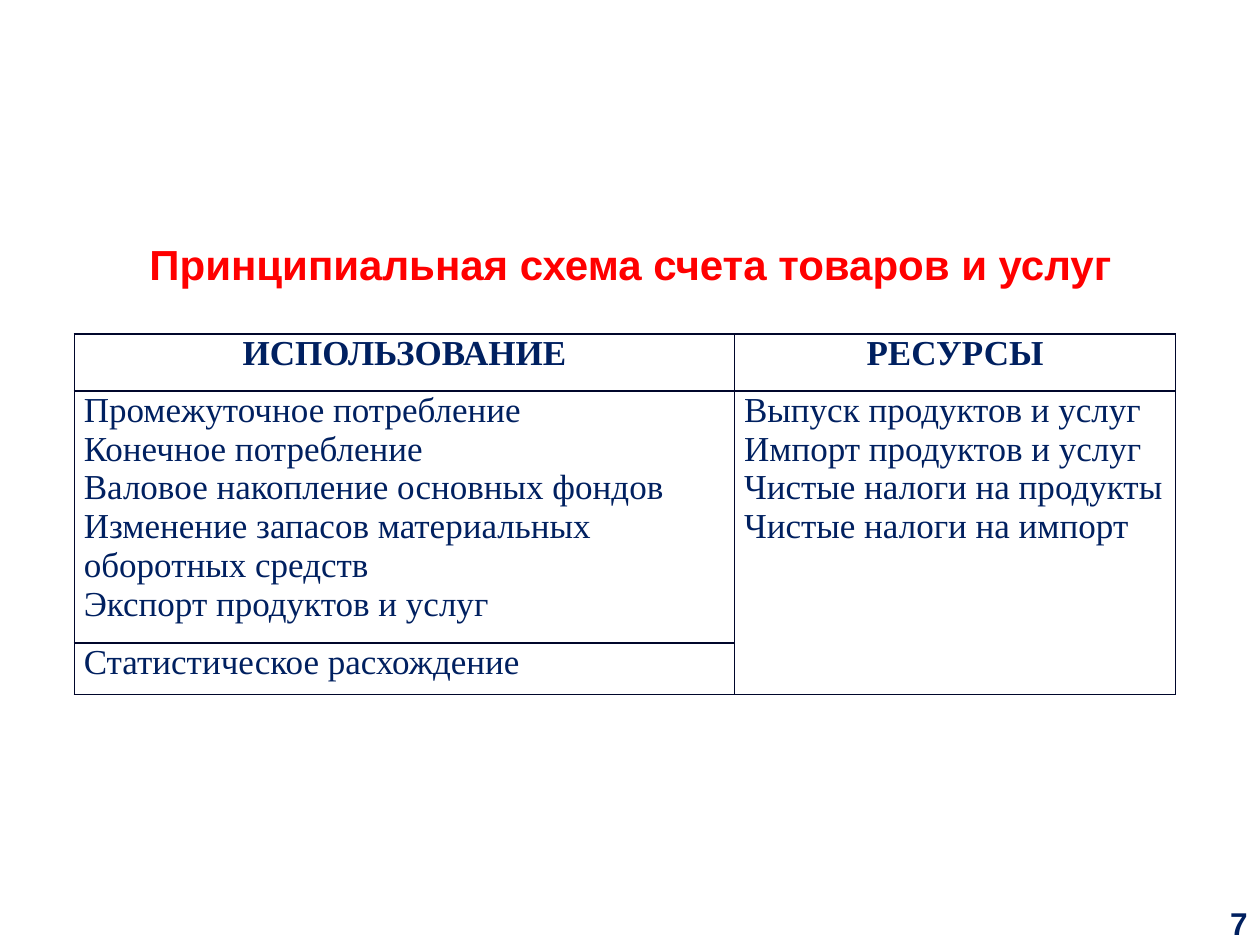
from lxml.etree import SubElement
from pptx import Presentation
from pptx.dml.color import RGBColor
from pptx.enum.text import MSO_ANCHOR, PP_ALIGN
from pptx.oxml.ns import qn
from pptx.util import Pt

NAVY = RGBColor(0x00, 0x20, 0x60)
BORDER = RGBColor(0x00, 0x06, 0x2B)
RED = RGBColor(0xFF, 0x00, 0x00)
WHITE = RGBColor(0xFF, 0xFF, 0xFF)

COLUMN_WIDTHS = (377.3, 252)
ROW_HEIGHTS = (32.6, 133.2, 29.5)
HEADERS = ("ИСПОЛЬЗОВАНИЕ", "РЕСУРСЫ")
# "\v" is a line break inside a paragraph
USES = [
    "Промежуточное потребление\vКонечное потребление\v"
    "Валовое накопление основных фондов\v"
    "Изменение запасов материальных оборотных средств\v"
    "Экспорт продуктов и услуг"
]
RESOURCES = [
    "Выпуск продуктов и услуг\vИмпорт продуктов и услуг",
    "Чистые налоги на продукты",
    "Чистые налоги на импорт",
]
DISCREPANCY = ["Статистическое расхождение"]


def write_text(frame, paragraphs, *, font, size, color=NAVY, bold=False,
               align=PP_ALIGN.LEFT, anchor=MSO_ANCHOR.TOP):
    frame.word_wrap = True
    frame.vertical_anchor = anchor
    for index, text in enumerate(paragraphs):
        paragraph = frame.add_paragraph() if index else frame.paragraphs[0]
        paragraph.text = text
        paragraph.alignment = align
        for run in paragraph.runs:
            run.font.name = font
            run.font.size = Pt(size)
            run.font.bold = bold
            run.font.color.rgb = color


def add_text_box(slide, box, text, **text_format):
    shape = slide.shapes.add_textbox(*map(Pt, box))
    write_text(shape.text_frame, [text], **text_format)


def style_cell(cell):
    """Set narrow margins, thin borders and a white fill."""
    cell.margin_left = cell.margin_right = Pt(5.4)
    cell.margin_top = cell.margin_bottom = 0
    properties = cell._tc.get_or_add_tcPr()
    for side in ("lnL", "lnR", "lnT", "lnB"):
        line = SubElement(properties, qn(f"a:{side}"), w=str(Pt(1)))
        fill = SubElement(line, qn("a:solidFill"))
        SubElement(fill, qn("a:srgbClr"), val=str(BORDER))
    cell.fill.solid()
    cell.fill.fore_color.rgb = WHITE


def add_account_table(slide, left, top):
    size = (sum(COLUMN_WIDTHS), sum(ROW_HEIGHTS))
    table = slide.shapes.add_table(
        len(ROW_HEIGHTS), len(COLUMN_WIDTHS), *map(Pt, (left, top, *size))).table
    for column, width in zip(table.columns, COLUMN_WIDTHS):
        column.width = Pt(width)
    for row, height in zip(table.rows, ROW_HEIGHTS):
        row.height = Pt(height)
    for cell in table.iter_cells():
        style_cell(cell)

    # Resources span both body rows
    table.cell(1, 1).merge(table.cell(2, 1))

    body_format = {"font": "Times New Roman", "size": 20}
    for index, header in enumerate(HEADERS):
        write_text(table.cell(0, index).text_frame, [header], bold=True,
                   align=PP_ALIGN.CENTER, **body_format)
    for position, paragraphs in {(1, 0): USES, (1, 1): RESOURCES,
                                 (2, 0): DISCREPANCY}.items():
        write_text(table.cell(*position).text_frame, paragraphs, **body_format)


def main():
    presentation = Presentation()
    presentation.slide_width, presentation.slide_height = Pt(720), Pt(540)
    slide = presentation.slides.add_slide(presentation.slide_layouts[6])

    # Page number
    add_text_box(slide, (683.3, 514, 36.7, 28), "7", font="Arial", size=18,
                 bold=True, align=PP_ALIGN.RIGHT, anchor=MSO_ANCHOR.BOTTOM)
    # Account table
    add_account_table(slide, 42.5, 190.8)
    # Title
    add_text_box(slide, (14.4, 132.5, 692, 36),
                 "Принципиальная схема счета товаров и услуг",
                 font="Arial", size=24, color=RED, bold=True,
                 align=PP_ALIGN.CENTER)

    presentation.save("out.pptx")


if __name__ == "__main__":
    main()
